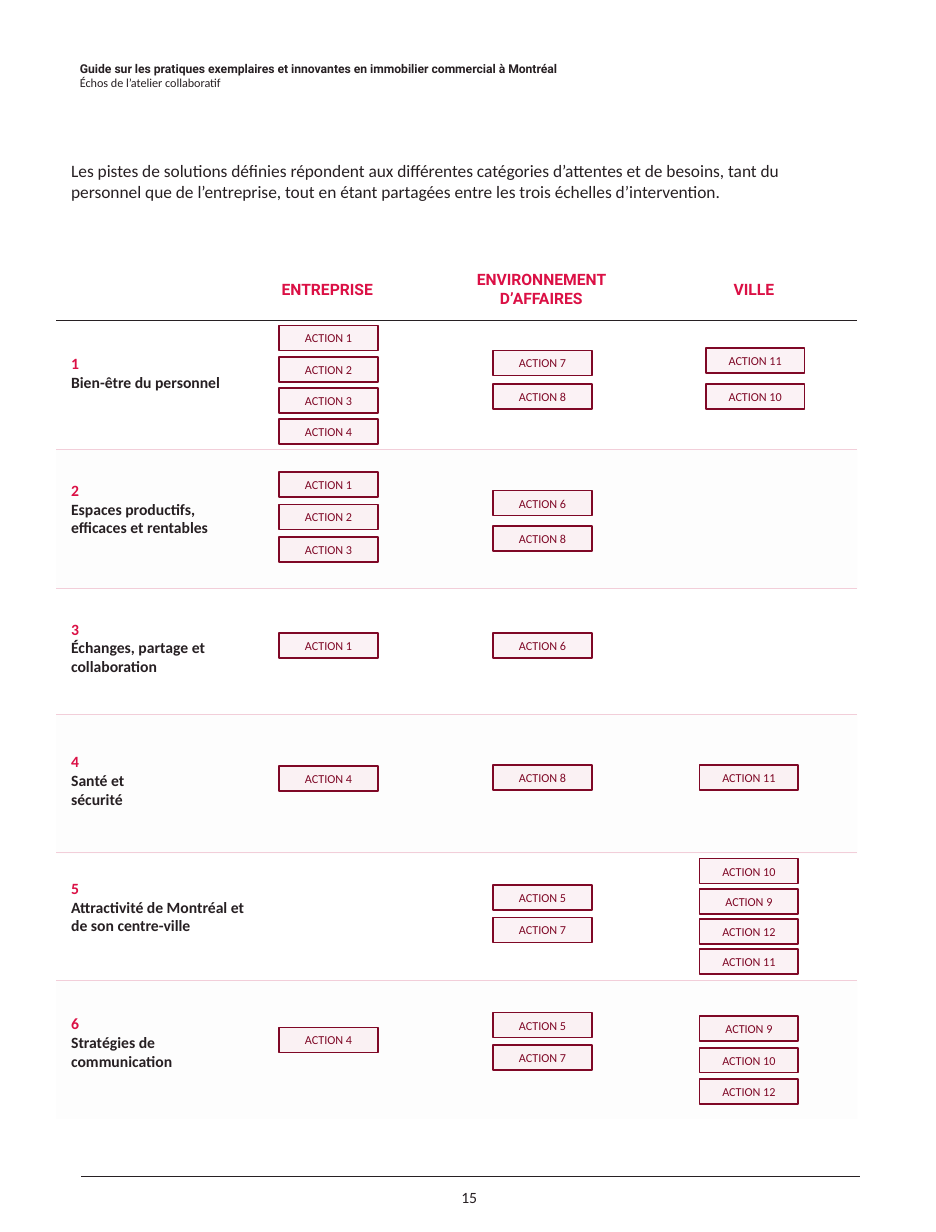
from lxml import etree
from pptx import Presentation
from pptx.dml.color import RGBColor
from pptx.enum.shapes import MSO_CONNECTOR, MSO_SHAPE
from pptx.enum.text import MSO_ANCHOR, MSO_AUTO_SIZE, PP_ALIGN
from pptx.oxml.ns import qn
from pptx.util import Inches, Pt

LEFT, CENTER = PP_ALIGN.LEFT, PP_ALIGN.CENTER
MIDDLE = MSO_ANCHOR.MIDDLE
GROW = MSO_AUTO_SIZE.SHAPE_TO_FIT_TEXT
RECTANGLE, STRAIGHT = MSO_SHAPE.RECTANGLE, MSO_CONNECTOR.STRAIGHT

COLOURS = {
    "ink": "272023",
    "red": "DB1045",
    "burgundy": "7F0826",
    "pink": "F2CED9",
    "grey": "F2F2F2",
}

# The page measures 19 by 25 centimetres
deck = Presentation()
deck.slide_width, deck.slide_height = Inches(19 / 2.54), Inches(25 / 2.54)
page = deck.slides.add_slide(deck.slide_layouts[6])


def add_text(box, text, font="Calibri", size=9, colour="ink", bold=False, align=LEFT):
    """Write text as the next paragraph of the box."""
    frame = box.text_frame
    frame.word_wrap = True
    para = frame.add_paragraph() if frame.text else frame.paragraphs[0]
    para.alignment = align
    span = para.add_run()
    span.text = text
    span.font.name, span.font.size, span.font.bold = font, Pt(size), bold
    span.font.color.rgb = RGBColor.from_string(COLOURS[colour])


def add_tinted_rectangle(left, top, width, height, colour, opacity):
    """Add a rectangle without outline; opacity is in percent."""
    box = page.shapes.add_shape(RECTANGLE, Inches(left), Inches(top), Inches(width), Inches(height))
    box.shadow.inherit = False
    box.line.fill.background()
    box.fill.solid()
    box.fill.fore_color.rgb = RGBColor.from_string(COLOURS[colour])
    tint = box.fill._xPr.find(".//" + qn("a:srgbClr"))
    etree.SubElement(tint, qn("a:alpha"), val=str(opacity * 1000))
    return box


# Shaded rows
for top in (3.59, 5.71, 7.83):
    add_tinted_rectangle(0.45, top, 6.4, 1.11, "grey", 15)

# Text boxes: position and size, then paragraphs with their format
heading = dict(font="Roboto", colour="red", bold=True, align=CENTER)
texts = [
    ((0.54, 0.44, 5.51, 0.34), [
        ("Guide sur les pratiques exemplaires et innovantes en immobilier commercial à Montréal",
         dict(font="Roboto", size=7, bold=True)),
        ("Échos de l’atelier collaboratif", dict(size=7)),
    ]),
    ((0.47, 1.23, 6.18, 0.44), [
        ("Les pistes de solutions définies répondent aux différentes catégories d’attentes et de "
         "besoins, tant du personnel que de l’entreprise, tout en étant partagées entre les trois "
         "échelles d’intervention.", dict(size=10)),
    ]),
    ((1.79, 2.19, 1.65, 0.25), [("ENTREPRISE", heading)]),
    ((3.5, 2.11, 1.65, 0.4), [("ENVIRONNEMENT D’AFFAIRES", heading)]),
    ((5.2, 2.19, 1.65, 0.25), [("VILLE", heading)]),
    ((3.39, 9.44, 0.72, 0.25), [("15", dict(align=CENTER))]),
]

# Row labels: top, width, height, paragraphs
categories = [
    (2.78, 1.55, 0.56, ["Bien-être du personnel"]),
    (3.79, 1.55, 0.71, ["Espaces productifs, efficaces et rentables"]),
    (4.9, 1.47, 0.56, ["Échanges, partage et collaboration"]),
    (5.96, 1.65, 0.56, ["Santé et", "sécurité"]),
    (6.97, 1.65, 0.71, ["Attractivité de Montréal et de son centre-ville"]),
    (8.05, 1.65, 0.56, ["Stratégies de communication"]),
]
for number, (top, width, height, names) in enumerate(categories, 1):
    paragraphs = [(str(number), dict(colour="red", bold=True))]
    paragraphs += [(name, dict(bold=True)) for name in names]
    texts.append(((0.47, top, width, height), paragraphs))

for position, paragraphs in texts:
    box = page.shapes.add_textbox(*map(Inches, position))
    box.text_frame.auto_size = GROW
    for text, style in paragraphs:
        add_text(box, text, **style)

# Rules: left, right, height on the page, colour
rules = [(0.65, 6.87, 9.4, "ink"), (0.45, 6.85, 2.56, "ink")]
rules += [(0.45, 6.85, y, "pink") for y in (3.59, 4.7, 5.71, 6.81, 7.83)]
for left, right, y, colour in rules:
    rule = page.shapes.add_connector(STRAIGHT, Inches(left), Inches(y), Inches(right), Inches(y))
    rule.line.color.rgb = RGBColor.from_string(COLOURS[colour])
    rule.line.width = Pt(0.5)
    etree.SubElement(rule._element.spPr, qn("a:effectLst"))

# Stacks of actions: left, top of the first, step, action numbers
stacks = [
    (2.23, 2.6, 0.25, [1, 2, 3, 4]),
    (2.23, 3.77, 0.26, [1, 2, 3]),
    (2.23, 5.06, 0, [1]),
    (2.23, 6.12, 0, [4]),
    (2.23, 8.21, 0, [4]),
    (3.94, 2.8, 0.27, [7, 8]),
    (3.94, 3.92, 0.28, [6, 8]),
    (3.94, 5.06, 0, [6]),
    (3.94, 6.11, 0, [8]),
    (3.94, 7.07, 0.26, [5, 7]),
    (3.94, 8.09, 0.26, [5, 7]),
    (5.64, 2.78, 0.29, [11, 10]),
    (5.59, 6.11, 0, [11]),
    (5.59, 6.86, 0.24, [10, 9, 12, 11]),
    (5.59, 8.12, 0.25, [9, 10, 12]),
]
for left, top, step, actions in stacks:
    for index, action in enumerate(actions):
        box = add_tinted_rectangle(left, top + index * step, 0.79, 0.2, "pink", 25)
        box.line.color.rgb = RGBColor.from_string(COLOURS["burgundy"])
        box.line.width = Pt(1)
        box.text_frame.vertical_anchor = MIDDLE
        add_text(box, f"ACTION {action}", size=7, colour="burgundy", align=CENTER)

deck.save("out.pptx")
